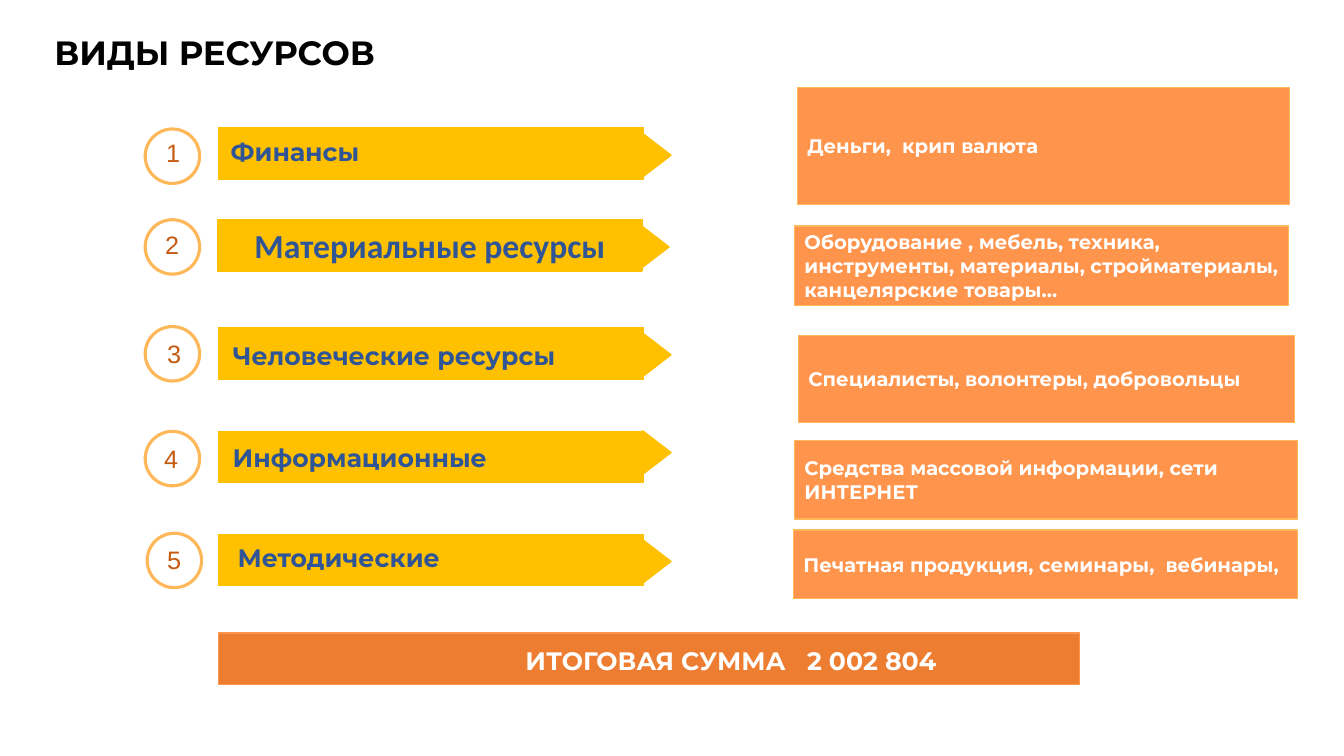
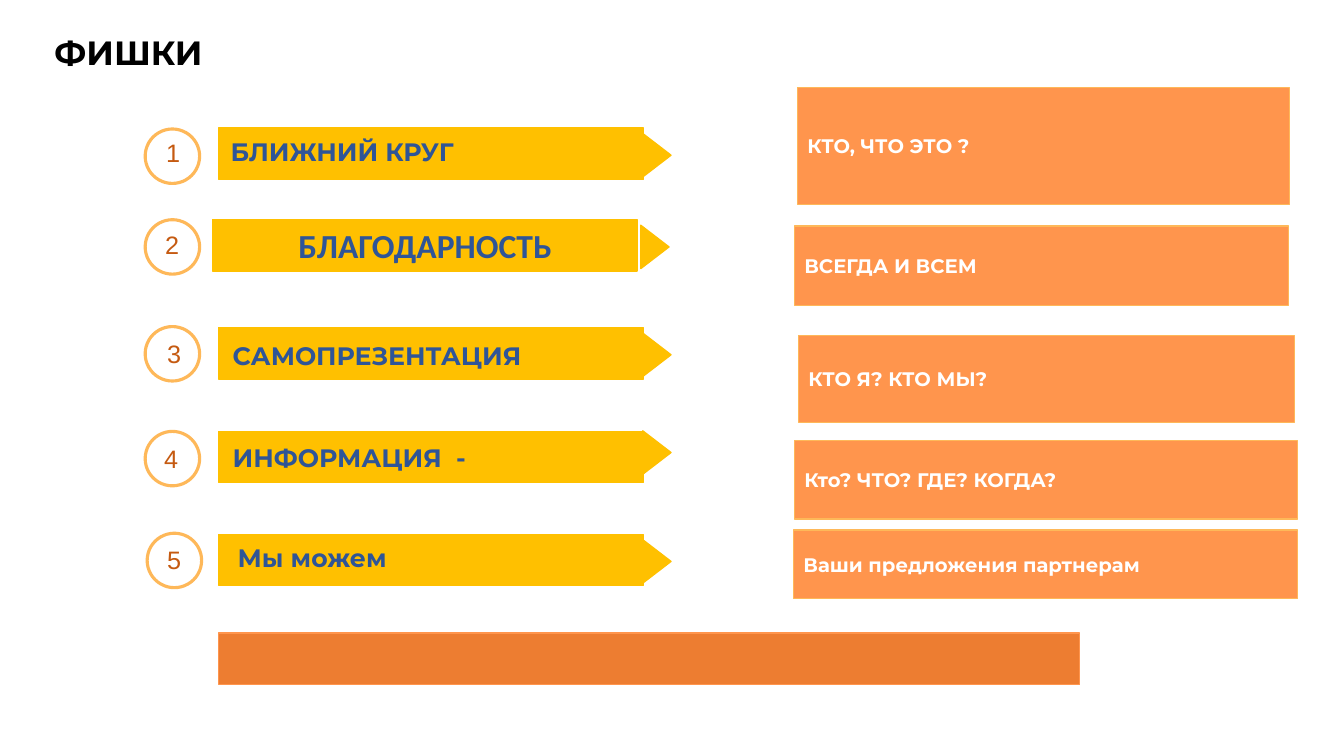
from dataclasses import dataclass
from typing import Optional

from pptx import Presentation
from pptx.dml.color import RGBColor
from pptx.enum import shapes, text
from pptx.util import Inches, Pt

COLORS = {
    "title": "000000",
    "banner": "FFC000",
    "label": "2F5597",
    "card": "FF954D",
    "card_line": "FEB859",
    "number": "C55A11",
    "total": "ED7D31",
    "white": "FFFFFF",
}
HEADING_FONT = "Montserrat"
BANNER_LEFT, BANNER_WIDTH, BANNER_HEIGHT = 2.17, 4.21, 0.51
ARROW_WIDTH, ARROW_HEIGHT = 0.43, 0.28
CIRCLE_SIZE = 0.54
TEXT_HEIGHT = 0.4


@dataclass(frozen=True)
class Box:
    left: float
    top: float
    width: float
    height: float

    def lengths(self) -> tuple:
        return tuple(Inches(v) for v in (self.left, self.top, self.width, self.height))


@dataclass(frozen=True)
class Row:
    circle: tuple[float, float]
    number: tuple[float, float]
    banner_top: float
    arrow: tuple[float, float]
    label: Optional[tuple[float, float]]
    card: Box


@dataclass(frozen=True)
class Page:
    title: str
    labels: tuple[str, ...]
    details: tuple[str, ...]
    total: str = ""
    centred_banner_left: float = 2.16


ROWS = (
    Row((1.44, 1.28), (1.55, 1.31), 1.27, (6.3, 1.4), (2.19, 1.3),
        Box(7.91, 0.87, 4.88, 1.16)),
    Row((1.44, 2.18), (1.54, 2.23), 2.18, (6.28, 2.31), None,
        Box(7.88, 2.24, 4.9, 0.79)),
    Row((1.44, 3.24), (1.56, 3.31), 3.25, (6.3, 3.38), (2.21, 3.33),
        Box(7.92, 3.33, 4.92, 0.86)),
    Row((1.44, 4.28), (1.53, 4.35), 4.28, (6.3, 4.35), (2.21, 4.34),
        Box(7.88, 4.37, 4.99, 0.78)),
    Row((1.46, 5.29), (1.56, 5.35), 5.3, (6.3, 5.43), (2.26, 5.33),
        Box(7.87, 5.26, 5, 0.68)),
)
PAGES = (
    Page(
        "ВИДЫ РЕСУРСОВ",
        ("Финансы", "Материальные ресурсы", "Человеческие ресурсы",
         "Информационные", "Методические"),
        ("Деньги,  крип валюта",
         "Оборудование , мебель, техника, инструменты, материалы, "
         "стройматериалы, канцелярские товары…",
         "Специалисты, волонтеры, добровольцы",
         "Средства массовой информации, сети ИНТЕРНЕТ",
         "Печатная продукция, семинары,  вебинары,"),
        total="ИТОГОВАЯ СУММА   2 002 804",
    ),
    Page(
        "ФИШКИ",
        ("БЛИЖНИЙ КРУГ", "БЛАГОДАРНОСТЬ", "САМОПРЕЗЕНТАЦИЯ",
         "ИНФОРМАЦИЯ  -", "Мы можем"),
        ("КТО, ЧТО ЭТО ?", "ВСЕГДА И ВСЕМ", "КТО Я? КТО МЫ?",
         "Кто? ЧТО? ГДЕ? КОГДА?", "Ваши предложения партнерам"),
        centred_banner_left=2.11,
    ),
)


def rgb(name: str) -> RGBColor:
    return RGBColor.from_string(COLORS[name])


def write_text(holder, content: str, *, size: float, color: str,
               font: str = HEADING_FONT, bold: bool = True,
               align=text.PP_ALIGN.LEFT, anchor=text.MSO_ANCHOR.TOP) -> None:
    frame = holder.text_frame
    frame.text = content
    frame.word_wrap = True
    frame.auto_size = text.MSO_AUTO_SIZE.NONE
    frame.vertical_anchor = anchor
    paragraph = frame.paragraphs[0]
    paragraph.alignment = align
    run_font = paragraph.runs[0].font
    run_font.name = font
    run_font.size = Pt(size)
    run_font.bold = bold
    run_font.color.rgb = rgb(color)


def add_text(parent, box: Box, content: str, **style) -> None:
    write_text(parent.shapes.add_textbox(*box.lengths()), content, **style)


def add_figure(parent, kind, box: Box, fill: str, line: str, weight: float = 1):
    figure = parent.shapes.add_shape(kind, *box.lengths())
    figure.shadow.inherit = False
    figure.fill.solid()
    figure.fill.fore_color.rgb = rgb(fill)
    figure.line.color.rgb = rgb(line)
    figure.line.width = Pt(weight)
    return figure


def draw_banner(slide, row: Row, label: str, centred_left: float) -> None:
    group = slide.shapes.add_group_shape()
    left = BANNER_LEFT if row.label else centred_left
    banner = add_figure(group, shapes.MSO_SHAPE.RECTANGLE,
                        Box(left, row.banner_top, BANNER_WIDTH, BANNER_HEIGHT),
                        "banner", "banner")
    arrow = add_figure(group, shapes.MSO_SHAPE.ISOSCELES_TRIANGLE,
                       Box(*row.arrow, ARROW_WIDTH, ARROW_HEIGHT), "banner", "banner")
    arrow.rotation = 90
    if row.label:
        add_text(slide, Box(*row.label, 4, TEXT_HEIGHT), label, size=18, color="label")
    else:
        write_text(banner, label, size=24, color="label", font="Calibri",
                   align=text.PP_ALIGN.CENTER, anchor=text.MSO_ANCHOR.MIDDLE)


def draw_number(slide, row: Row, number: int) -> None:
    group = slide.shapes.add_group_shape()
    add_figure(group, shapes.MSO_SHAPE.OVAL,
               Box(*row.circle, CIRCLE_SIZE, CIRCLE_SIZE), "white", "card_line", 2.25)
    add_text(group, Box(*row.number, CIRCLE_SIZE, TEXT_HEIGHT), str(number),
             size=18, color="number", font="Arial", bold=False)


def draw_card(slide, row: Row, detail: str) -> None:
    card = add_figure(slide, shapes.MSO_SHAPE.RECTANGLE, row.card, "card", "card_line")
    write_text(card, detail, size=14, color="white", anchor=text.MSO_ANCHOR.MIDDLE)


def draw_page(deck, page: Page) -> None:
    slide = deck.slides.add_slide(deck.slide_layouts[5])
    title = slide.shapes.title
    title.left, title.top, title.width, title.height = Box(0.44, 0.27, 7.67, 0.91).lengths()
    write_text(title, page.title, size=24, color="title")
    rows = zip(ROWS, page.labels, page.details)
    for number, (row, label, detail) in enumerate(rows, start=1):
        draw_number(slide, row, number)
        draw_banner(slide, row, label, page.centred_banner_left)
        draw_card(slide, row, detail)
    add_figure(slide, shapes.MSO_SHAPE.RECTANGLE,
               Box(BANNER_LEFT, 6.28, 8.54, BANNER_HEIGHT), "total", "card")
    if page.total:
        add_text(slide, Box(5.07, 6.35, 4.36, TEXT_HEIGHT), page.total,
                 size=18, color="white", align=text.PP_ALIGN.CENTER)


def main() -> None:
    deck = Presentation()
    deck.slide_width, deck.slide_height = Inches(13.33), Inches(7.5)
    for page in PAGES:
        draw_page(deck, page)
    deck.save("out.pptx")


if __name__ == "__main__":
    main()
